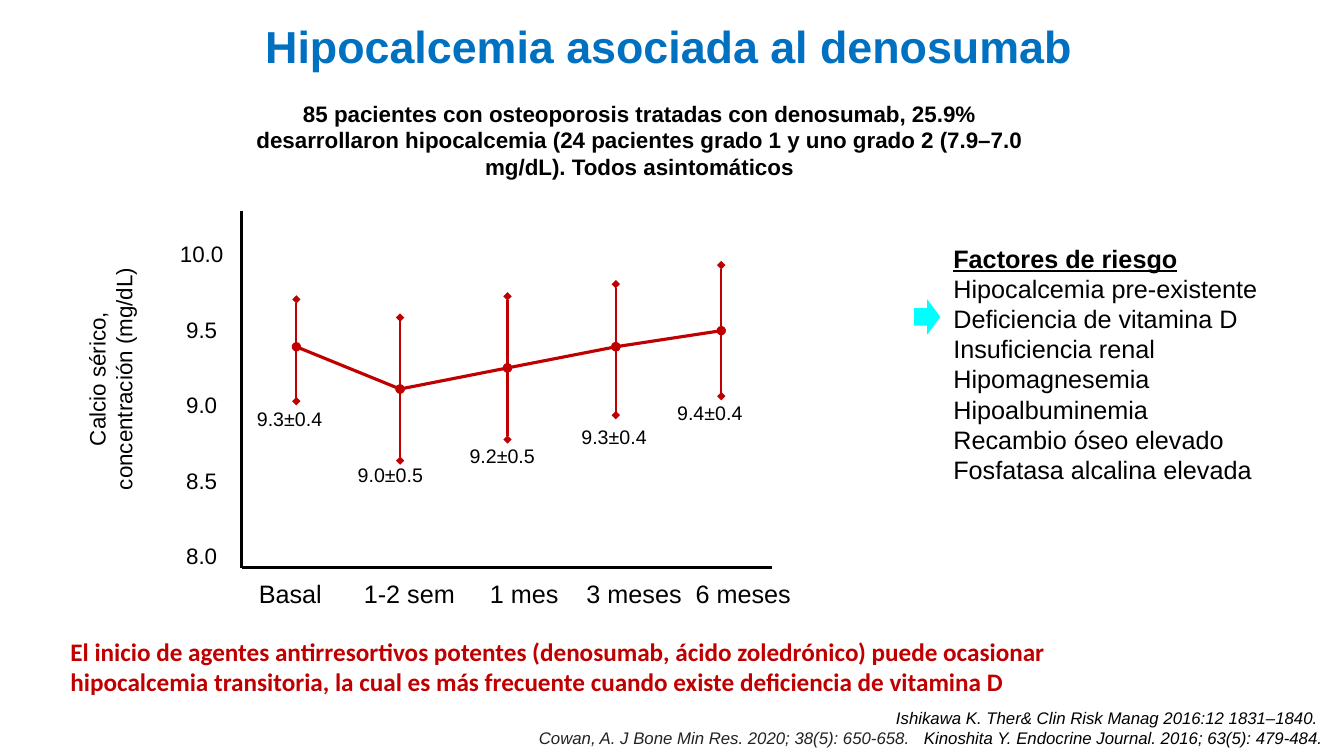
import pptx
import pptx.util
import pptx.dml.color
import pptx.enum.shapes
import pptx.enum.text
import pptx.oxml.ns
import lxml.etree

Pt = pptx.util.Pt
RGBColor = pptx.dml.color.RGBColor
ALIGN = pptx.enum.text.PP_ALIGN
AUTO_SIZE = pptx.enum.text.MSO_AUTO_SIZE

BLACK = RGBColor(0x00, 0x00, 0x00)
DARK_GREY = RGBColor(0x22, 0x22, 0x22)
BLUE = RGBColor(0x00, 0x70, 0xC0)
RED = RGBColor(0xC0, 0x00, 0x00)
CYAN = RGBColor(0x00, 0xFF, 0xFF)

TITLE = "Hipocalcemia asociada al denosumab"
SUMMARY = ("85 pacientes con osteoporosis tratadas con denosumab, 25.9% desarrollaron "
           "hipocalcemia (24 pacientes grado 1 y uno grado 2 (7.9–7.0 mg/dL). "
           "Todos asintomáticos")
CONCLUSION = ("El inicio de agentes antirresortivos potentes (denosumab, ácido zoledrónico) "
              "puede ocasionar hipocalcemia transitoria, la cual es más frecuente cuando "
              "existe deficiencia de vitamina D")
AXIS_TITLE = "Calcio sérico, concentración (mg/dL)"
CALCIUM_TICKS = ["10.0", "9.5", "9.0", "8.5", "8.0"]
VISITS = ["Basal", "1-2 sem", "1 mes", "3 meses", "6 meses"]
VISIT_TABS = [75, 165, 234, 312]
RISK_FACTORS = [
    "Factores de riesgo", "Hipocalcemia pre-existente", "Deficiencia de vitamina D",
    "Insuficiencia renal", "Hipomagnesemia", "Hipoalbuminemia",
    "Recambio óseo elevado", "Fosfatasa alcalina elevada",
]
FIRST_REFERENCE = "Ishikawa K. Ther& Clin Risk Manag 2016:12 1831–1840. "
SECOND_REFERENCE = "Cowan, A. J Bone Min Res. 2020; 38(5): 650-658."
THIRD_REFERENCE = "Kinoshita Y. Endocrine Journal. 2016; 63(5): 479-484."

# x, mean y, whisker top, whisker bottom, label, label left, label top
MEASUREMENTS = [
    (211.7, 247.7, 213.8, 286.6, "9.3±0.4", 176.4, 287.3),
    (285.8, 277.9, 226.8, 329.0, "9.0±0.5", 248.4, 326.9),
    (362.5, 262.8, 211.7, 313.9, "9.2±0.5", 328.3, 313.2),
    (439.9, 247.7, 203.0, 296.6, "9.3±0.4", 408.2, 300.2),
    (515.2, 236.2, 189.4, 283.0, "9.4±0.4", 476.6, 283.0),
]
AXIS_LEFT, AXIS_TOP, AXIS_RIGHT, AXIS_BOTTOM = 172.8, 150.5, 551.5, 405.4


def set_font(target, color=BLACK, **values):
    for name, value in {"name": "Arial", **values}.items():
        setattr(target.font, name, value)
    target.font.color.rgb = color


def add_text(slide, box, lines, size, color=BLACK, align=ALIGN.LEFT, wrap=True, **values):
    """Add a text box with one paragraph per line and return it."""
    shape = slide.shapes.add_textbox(*map(Pt, box))
    frame = shape.text_frame
    frame.word_wrap = wrap
    frame.auto_size = AUTO_SIZE.SHAPE_TO_FIT_TEXT
    frame.text = "\n".join(lines)
    for paragraph in frame.paragraphs:
        paragraph.alignment = align
        for run in paragraph.runs:
            set_font(run, color, size=Pt(size), **values)
    return shape


def add_line(slide, start, end, color, width, marker=None):
    """Add a straight line, with the same marker at both ends if given."""
    line = slide.shapes.add_connector(
        pptx.enum.shapes.MSO_CONNECTOR.STRAIGHT, *map(Pt, (*start, *end)))
    line.line.color.rgb = color
    line.line.width = Pt(width)
    if marker:
        outline = line.line._get_or_add_ln()
        for tag in ("a:headEnd", "a:tailEnd"):
            lxml.etree.SubElement(outline, pptx.oxml.ns.qn(tag), type=marker)
    lxml.etree.SubElement(line._element.spPr, pptx.oxml.ns.qn("a:effectLst"))


def add_title(slide):
    title = slide.shapes.title
    title.left, title.top, title.width, title.height = map(Pt, (182.2, 9.4, 595.4, 46))
    frame = title.text_frame
    frame.text = TITLE
    frame.auto_size = AUTO_SIZE.NONE
    frame.word_wrap = False
    frame.vertical_anchor = pptx.enum.text.MSO_ANCHOR.TOP
    frame.paragraphs[0].alignment = ALIGN.LEFT
    set_font(frame.paragraphs[0].runs[0], BLUE, size=Pt(32), bold=True)


def add_calcium_plot(slide):
    corner = (AXIS_LEFT, AXIS_BOTTOM)
    add_line(slide, (AXIS_LEFT, AXIS_TOP), corner, BLACK, 2.25)
    add_line(slide, (AXIS_RIGHT, AXIS_BOTTOM), corner, BLACK, 2.25)
    means = [(x, y) for x, y, *_ in MEASUREMENTS]
    for start, end in zip(means, means[1:]):
        add_line(slide, start, end, RED, 2.25, "oval")
    for x, _, top, bottom, label, label_left, label_top in MEASUREMENTS:
        add_line(slide, (x, top), (x, bottom), RED, 1.5, "diamond")
        add_text(slide, (label_left, label_top, 61.2, 24.5), [label], 14, wrap=False)

    ticks = add_text(slide, (121, 133.2, 46, 279.4), CALCIUM_TICKS, 16,
                     align=ALIGN.CENTER, wrap=False)
    for paragraph in ticks.text_frame.paragraphs:
        paragraph.line_spacing = Pt(54)

    visits = add_text(slide, (177.8, 409.7, 420, 29), ["\t".join(VISITS)], 18)
    properties = visits.text_frame.paragraphs[0]._p.get_or_add_pPr()
    tabs = lxml.etree.SubElement(properties, pptx.oxml.ns.qn("a:tabLst"))
    for position in VISIT_TABS:
        lxml.etree.SubElement(tabs, pptx.oxml.ns.qn("a:tab"), pos=str(Pt(position)), algn="l")

    axis_title = add_text(slide, (-21.6, 247.7, 200.9, 46), [AXIS_TITLE], 16,
                          align=ALIGN.CENTER)
    axis_title.rotation = 270


def add_risk_factors(slide):
    factors = add_text(slide, (673.9, 169.9, 234, 181.4), RISK_FACTORS, 18, wrap=False)
    heading = factors.text_frame.paragraphs[0].runs[0]
    heading.font.bold = heading.font.underline = True
    arrow = slide.shapes.add_shape(pptx.enum.shapes.MSO_SHAPE.RIGHT_ARROW,
                                   *map(Pt, (653, 213.8, 18.7, 25.2)))
    arrow.shadow.inherit = False
    arrow.fill.solid()
    arrow.fill.fore_color.rgb = CYAN
    arrow.line.fill.background()


def add_references(slide):
    references = add_text(slide, (211.7, 501.8, 740.2, 36),
                          [FIRST_REFERENCE, SECOND_REFERENCE], 12,
                          align=ALIGN.RIGHT, italic=True)
    last_line = references.text_frame.paragraphs[1]
    last_line.runs[0].font.color.rgb = DARK_GREY
    for text in (" ", THIRD_REFERENCE):
        run = last_line.add_run()
        run.text = text
        set_font(run, size=Pt(12), italic=True)
    # Widen the single space between the two references
    last_line.runs[1].font._element.set("spc", "670")


def main():
    presentation = pptx.Presentation()
    presentation.slide_width, presentation.slide_height = Pt(960), Pt(540)
    slide = presentation.slides.add_slide(presentation.slide_layouts[5])
    add_title(slide)
    add_text(slide, (159.1, 67.7, 595.4, 65.5), [SUMMARY], 16,
             align=ALIGN.CENTER, bold=True)
    add_calcium_plot(slide)
    add_risk_factors(slide)
    add_text(slide, (43.2, 450.7, 766, 51), [CONCLUSION], 18, RED,
             name="Calibri", bold=True)
    add_references(slide)
    presentation.save("out.pptx")


if __name__ == "__main__":
    main()
